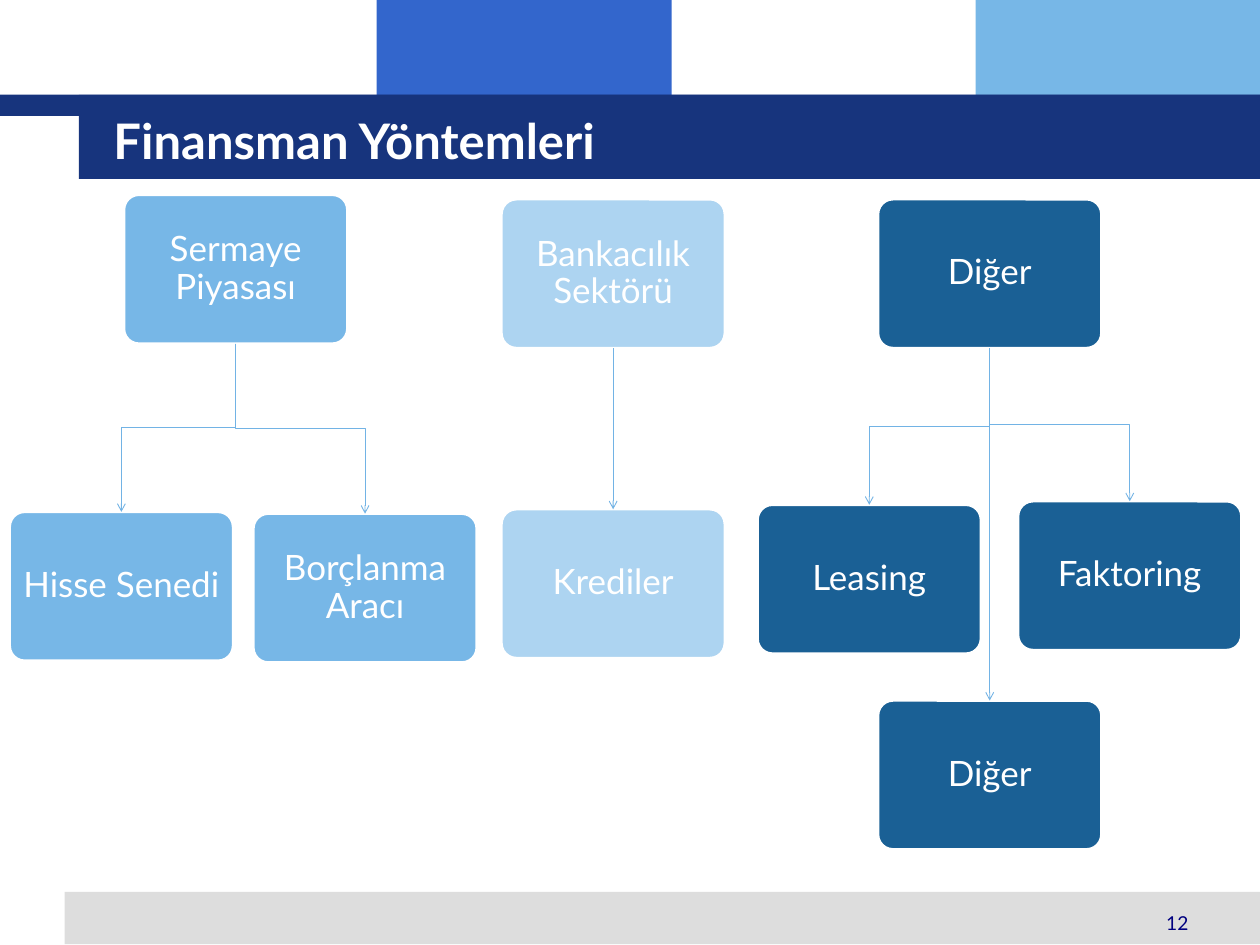
from lxml import etree
from pptx import Presentation
from pptx.dml.color import RGBColor
from pptx.enum.shapes import MSO_CONNECTOR, MSO_SHAPE
from pptx.enum.text import MSO_ANCHOR, MSO_AUTO_SIZE, PP_ALIGN
from pptx.oxml.ns import qn
from pptx.util import Inches, Pt

RECT, ROUNDED = MSO_SHAPE.RECTANGLE, MSO_SHAPE.ROUNDED_RECTANGLE
STRAIGHT, ELBOW = MSO_CONNECTOR.STRAIGHT, MSO_CONNECTOR.ELBOW
LEFT, CENTER, RIGHT = PP_ALIGN.LEFT, PP_ALIGN.CENTER, PP_ALIGN.RIGHT
MIDDLE = MSO_ANCHOR.MIDDLE
NO_FIT = MSO_AUTO_SIZE.NONE

FONT = "Lato"
WHITE, NAVY, BLUE, SKY = "FFFFFF", "17347D", "3366CC", "77B7E7"
PALE, TEAL, GREY, NUMBER, ARROW = "ADD4F1", "1A6095", "DDDDDD", "000080", "72B3E5"
CARD_WIDTH, CARD_HEIGHT = 2.52, 1.68
BOTTOM_SITE, TOP_SITE = 2, 0

BANDS = [
    (4.25, 0, 3.33, 1.3, BLUE),
    (11.01, 0, 3.21, 1.3, SKY),
    (0, 1.07, 14.22, 0.24, NAVY),
    (0.89, 1.07, 13.33, 0.95, NAVY),
    (0.73, 10.07, 13.49, 0.59, GREY),
]

METHODS = [
    (SKY, ("Sermaye Piyasası", 1.4, 2.2),
     [("Hisse Senedi", 0.11, 5.78), ("Borçlanma Aracı", 2.86, 5.8)]),
    (PALE, ("Bankacılık Sektörü", 5.66, 2.25),
     [("Krediler", 5.66, 5.75)]),
    (TEAL, ("Diğer", 9.91, 2.25),
     [("Leasing", 8.55, 5.7), ("Faktoring", 11.49, 5.66), ("Diğer", 9.91, 7.91)]),
]


def color(value):
    return RGBColor.from_string(value)


def write(frame, text, size, ink=WHITE, bold=False, align=LEFT,
          inset=(0.1, 0.05), spacing=1.0):
    frame.word_wrap = True
    frame.auto_size = NO_FIT
    frame.vertical_anchor = MIDDLE
    frame.margin_left = frame.margin_right = Inches(inset[0])
    frame.margin_top = frame.margin_bottom = Inches(inset[1])
    frame.text = text
    paragraph = frame.paragraphs[0]
    paragraph.alignment = align
    paragraph.line_spacing = spacing
    paragraph.space_before = Pt(0)
    font = paragraph.runs[0].font
    font.name, font.size, font.bold = FONT, Pt(size), bold
    font.color.rgb = color(ink)


def add_block(slide, kind, left, top, width, height, fill):
    block = slide.shapes.add_shape(
        kind, Inches(left), Inches(top), Inches(width), Inches(height))
    block.shadow.inherit = False
    block.fill.solid()
    block.fill.fore_color.rgb = color(fill)
    block.line.fill.background()
    return block


def add_card(slide, label, left, top, fill):
    card = add_block(slide, ROUNDED, left, top, CARD_WIDTH, CARD_HEIGHT, fill)
    card.adjustments[0] = 0.1
    card.line.color.rgb = color(WHITE)
    card.line.width = Pt(2)
    write(card.text_frame, label, size=28.4, align=CENTER,
          inset=(0.02, 0.02), spacing=0.9)
    return card


def turn_downwards(arrow, shift, drop):
    center_x = arrow.left + arrow.width // 2
    center_y = arrow.top + arrow.height // 2
    arrow.width, arrow.height = drop, abs(shift)
    arrow.left, arrow.top = center_x - drop // 2, center_y - abs(shift) // 2
    frame = arrow._element.spPr.find(qn("a:xfrm"))
    frame.attrib.pop("flipH", None)
    frame.set("rot", str((90 if shift < 0 else 270) * 60000))
    if shift > 0:
        frame.set("flipH", "1")


def add_arrow(slide, parent, child):
    shift = child.left - parent.left
    drop = child.top - parent.top - parent.height
    kind = ELBOW if shift else STRAIGHT
    arrow = slide.shapes.add_connector(kind, 0, 0, 0, 0)
    arrow.begin_connect(parent, BOTTOM_SITE)
    arrow.end_connect(child, TOP_SITE)
    if shift:
        turn_downwards(arrow, shift, drop)
    arrow.line.color.rgb = color(ARROW)
    arrow.line.width = Pt(0.75)
    etree.SubElement(arrow.line._get_or_add_ln(), qn("a:tailEnd"), type="arrow")
    etree.SubElement(arrow._element.spPr, qn("a:effectLst"))


def add_title(slide, text):
    title = slide.shapes.title
    title.left, title.top = Inches(1.14), Inches(1.14)
    title.width, title.height = Inches(12.58), Inches(0.88)
    write(title.text_frame, text, size=39.8, bold=True, inset=(0.14, 0.07))
    slide.shapes._spTree.append(title._element)


def add_page_number(slide, number):
    box = slide.shapes.add_textbox(
        Inches(10.19), Inches(10.14), Inches(3.32), Inches(0.57))
    write(box.text_frame, number, size=15.6, ink=NUMBER, align=RIGHT)


def main():
    deck = Presentation()
    deck.slide_width, deck.slide_height = Inches(14.22), Inches(10.67)
    slide = deck.slides.add_slide(deck.slide_layouts[5])
    for *place, fill in BANDS:
        add_block(slide, RECT, *place, fill)
    add_page_number(slide, "12")
    add_title(slide, "Finansman Yöntemleri")
    for fill, source, instruments in METHODS:
        parent = add_card(slide, *source, fill)
        children = [add_card(slide, *instrument, fill) for instrument in instruments]
        for child in children:
            add_arrow(slide, parent, child)
    deck.save("out.pptx")


if __name__ == "__main__":
    main()
